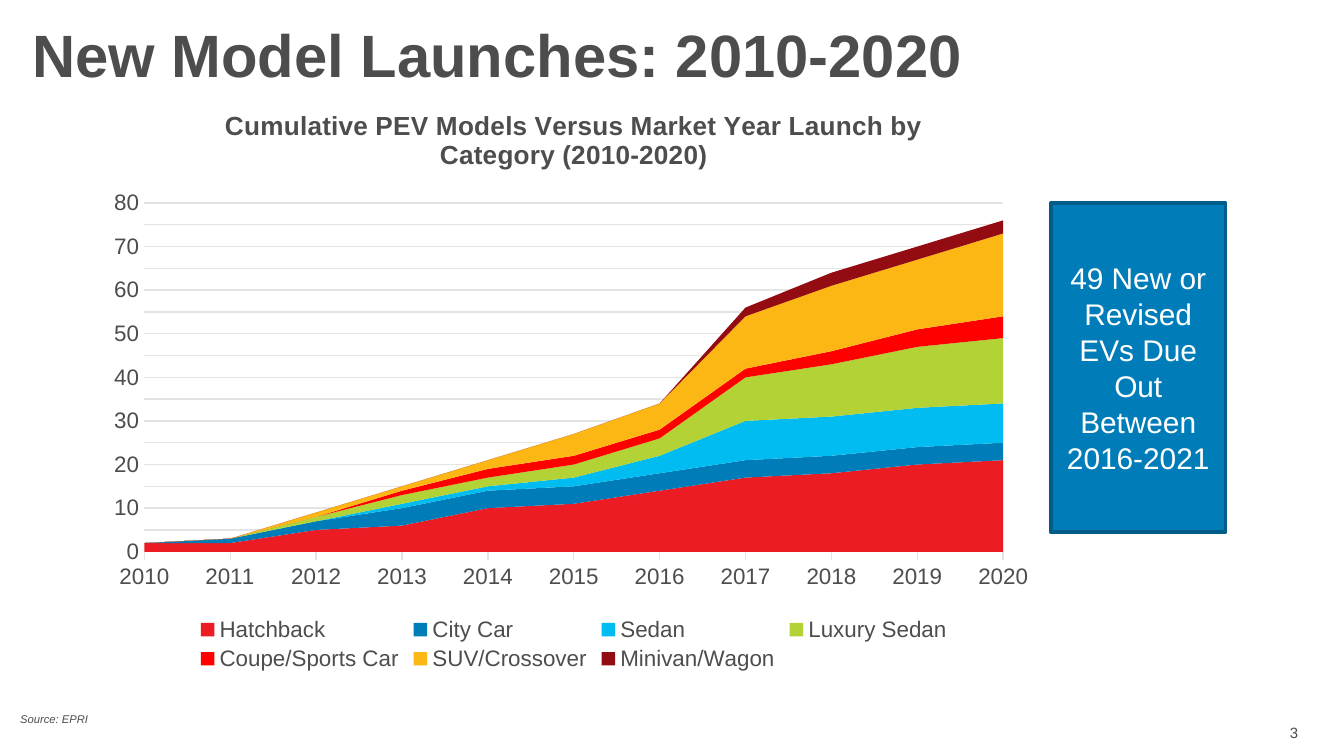
from dataclasses import dataclass

from lxml import etree
from pptx import Presentation
from pptx.chart.data import CategoryChartData
from pptx.dml.color import RGBColor
from pptx.enum import chart as ch, shapes, text
from pptx.util import Pt

FONT = "Arial"
HUES = {
    "ink": "4D4D4D", "grid": "E4E4E4", "white": "FFFFFF", "edge": "005C89",
    "red": "EC1C24", "blue": "007DB9", "sky": "00BCF1", "lime": "B2D235",
    "hot": "FF0000", "gold": "FDB714", "wine": "920C11",
}
YEARS = [str(year) for year in range(2010, 2021)]
# Inner plot area as fractions of the chart frame
PLOT = {"x": 0.05, "y": 0.2, "w": 0.9, "h": 0.59}


@dataclass
class Box:
    left: float
    top: float
    width: float
    height: float

    def place(self) -> list:
        return [Pt(n) for n in (self.left, self.top, self.width, self.height)]


@dataclass
class Label:
    words: str
    box: Box
    size: float
    hue: str = "ink"
    bold: bool = False
    slant: bool = False
    align: text.PP_ALIGN = text.PP_ALIGN.LEFT
    anchor: text.MSO_ANCHOR = text.MSO_ANCHOR.TOP


@dataclass
class Band:
    name: str
    hue: str
    counts: list


LABELS = [
    Label("New Model Launches: 2010-2020", Box(17.3, 9.4, 580, 36), 32, bold=True),
    Label("Source: EPRI", Box(10.8, 381.6, 389.5, 7.2), 6, slant=True,
          anchor=text.MSO_ANCHOR.BOTTOM),
    Label("3", Box(671, 387.4, 24.5, 10), 8, align=text.PP_ALIGN.RIGHT),
]
CALL = Label("49 New or Revised EVs Due Out Between 2016-2021",
             Box(563, 108.7, 93.6, 176.4), 16, "white",
             align=text.PP_ALIGN.CENTER, anchor=text.MSO_ANCHOR.MIDDLE)
BANDS = [
    Band("Hatchback", "red", [2, 2, 5, 6, 10, 11, 14, 17, 18, 20, 21]),
    Band("City Car", "blue", [0, 1, 2, 4, 4, 4, 4, 4, 4, 4, 4]),
    Band("Sedan", "sky", [0, 0, 0, 1, 1, 2, 4, 9, 9, 9, 9]),
    Band("Luxury Sedan", "lime", [0, 0, 1, 2, 2, 3, 4, 10, 12, 14, 15]),
    Band("Coupe/Sports Car", "hot", [0, 0, 0, 1, 2, 2, 2, 2, 3, 4, 5]),
    Band("SUV/Crossover", "gold", [0, 0, 1, 1, 2, 5, 6, 12, 15, 16, 19]),
    Band("Minivan/Wagon", "wine", [0, 0, 0, 0, 0, 0, 0, 2, 3, 3, 3]),
]


def tint(name: str) -> RGBColor:
    return RGBColor.from_string(HUES[name])


def style(font, size: float, hue: str = "ink", bold: bool = False,
          slant: bool = False) -> None:
    font.name, font.size = FONT, Pt(size)
    font.bold, font.italic = bold, slant
    font.color.rgb = tint(hue)


def fill(frame, label: Label) -> None:
    """Write the label's words into a text frame."""
    frame.word_wrap = True
    frame.vertical_anchor = label.anchor
    frame.text = label.words
    para = frame.paragraphs[0]
    para.alignment = label.align
    style(para.runs[0].font, label.size, label.hue, label.bold, label.slant)


def write(slide, label: Label) -> None:
    frame = slide.shapes.add_textbox(*label.box.place()).text_frame
    frame.margin_left = frame.margin_right = 0
    frame.margin_top = frame.margin_bottom = 0
    fill(frame, label)


def callout(slide, label: Label) -> None:
    shape = slide.shapes.add_shape(shapes.MSO_SHAPE.RECTANGLE, *label.box.place())
    shape.shadow.inherit = False
    shape.fill.solid()
    shape.fill.fore_color.rgb = tint("blue")
    shape.line.color.rgb = tint("edge")
    shape.line.width = Pt(2)
    fill(shape.text_frame, label)


def rule(line) -> None:
    line.color.rgb = tint("grid")
    line.width = Pt(0.75)


def fix_plot(chart) -> None:
    """Pin the inner plot area and start the areas on the value axis."""
    plot = chart._chartSpace.chart.plotArea
    space = plot.nsmap["c"]
    for old in plot.findall(f"{{{space}}}layout"):
        plot.remove(old)
    layout = etree.Element(f"{{{space}}}layout")
    manual = etree.SubElement(layout, f"{{{space}}}manualLayout")
    parts = {"layoutTarget": "inner", "xMode": "edge", "yMode": "edge", **PLOT}
    for tag, val in parts.items():
        etree.SubElement(manual, f"{{{space}}}{tag}", val=str(val))
    plot.insert(0, layout)
    for cross in plot.iter(f"{{{space}}}crossBetween"):
        cross.set("val", "midCat")


def graph(slide, box: Box) -> None:
    data = CategoryChartData()
    data.categories = YEARS
    for band in BANDS:
        data.add_series(band.name, band.counts)
    chart = slide.shapes.add_chart(
        ch.XL_CHART_TYPE.AREA_STACKED, *box.place(), data).chart
    style(chart.font, 10)

    chart.has_title = True
    head = chart.chart_title
    head.include_in_layout = False
    head.text_frame.text = ("Cumulative PEV Models Versus Market Year Launch "
                            "by Category (2010-2020)")
    style(head.text_frame.paragraphs[0].runs[0].font, 14, bold=True)

    chart.has_legend = True
    chart.legend.position = ch.XL_LEGEND_POSITION.BOTTOM
    chart.legend.include_in_layout = False
    style(chart.legend.font, 12)

    chart.plots[0].vary_by_categories = False
    for series, band in zip(chart.plots[0].series, BANDS):
        series.format.fill.solid()
        series.format.fill.fore_color.rgb = tint(band.hue)
        series.format.line.fill.background()

    years, count = chart.category_axis, chart.value_axis
    for axis in (years, count):
        style(axis.tick_labels.font, 12)
    years.major_tick_mark = ch.XL_TICK_MARK.OUTSIDE
    rule(years.format.line)
    count.major_tick_mark = ch.XL_TICK_MARK.NONE
    count.minimum_scale, count.maximum_scale, count.major_unit = 0, 80, 5
    count.format.line.fill.background()
    rule(count.major_gridlines.format.line)
    fix_plot(chart)


def main() -> None:
    deck = Presentation()
    deck.slide_width, deck.slide_height = Pt(720), Pt(405)
    slide = deck.slides.add_slide(deck.slide_layouts[6])
    for label in LABELS:
        write(slide, label)
    graph(slide, Box(51.8, 45.4, 511.2, 316.8))
    callout(slide, CALL)
    deck.save("out.pptx")


if __name__ == "__main__":
    main()
